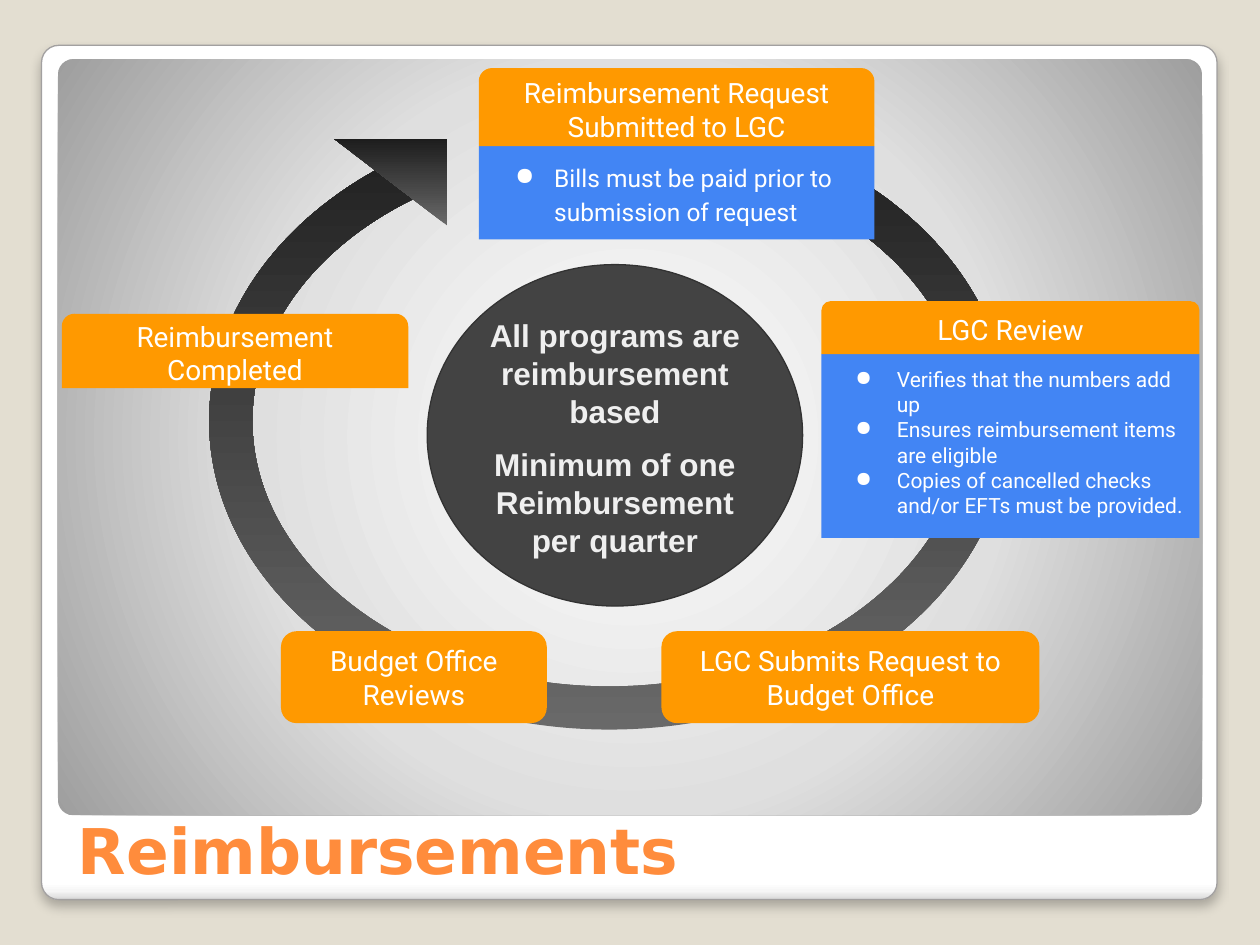
from dataclasses import dataclass

from lxml import etree
from pptx import Presentation
from pptx.dml.color import RGBColor
from pptx.enum.shapes import MSO_SHAPE
from pptx.enum.text import MSO_ANCHOR, PP_ALIGN
from pptx.oxml.ns import nsdecls, qn
from pptx.util import Inches, Pt

RECTANGLE = MSO_SHAPE.RECTANGLE
ROUNDED = MSO_SHAPE.ROUNDED_RECTANGLE
ROUND_TOP = MSO_SHAPE.ROUND_2_SAME_RECTANGLE
OVAL = MSO_SHAPE.OVAL
BLOCK_ARC = MSO_SHAPE.BLOCK_ARC
RIGHT_TRIANGLE = MSO_SHAPE.RIGHT_TRIANGLE
CENTER, LEFT = PP_ALIGN.CENTER, PP_ALIGN.LEFT
TOP, MIDDLE, BOTTOM = MSO_ANCHOR.TOP, MSO_ANCHOR.MIDDLE, MSO_ANCHOR.BOTTOM

SAND = RGBColor(0xE3, 0xDE, 0xD1)
WHITE = RGBColor(0xFF, 0xFF, 0xFF)
FRAME_LINE = RGBColor(0xA2, 0xA0, 0xA0)
CHARCOAL = RGBColor(0x43, 0x43, 0x43)
CHARCOAL_LINE = RGBColor(0x32, 0x32, 0x32)
PALE = RGBColor(0xEF, 0xEF, 0xEF)
ORANGE = RGBColor(0xFF, 0x99, 0x00)
TITLE_ORANGE = RGBColor(0xFF, 0x8C, 0x3C)
BLUE = RGBColor(0x42, 0x85, 0xF4)

COLUMNS, ROWS = 100, 75
CELL = Inches(0.1)

DOWNWARD = '<a:lin ang="5400000" scaled="0"/>'
FROM_CENTER = ('<a:path path="circle"><a:fillToRect l="50000" t="50000" '
               'r="50000" b="50000"/></a:path>')
FRAME_STOPS = [(0, "FFFFFF"), (98, "FFFFFF"), (99, "F6F6F6"), (100, "D8D8D8")]
PANEL_STOPS = [(0, "FFFFFF"), (55, "DFDFDF"), (100, "9E9E9E")]
ARROW_STOPS = [(0, "696969"), (100, "1D1D1D")]


@dataclass(frozen=True)
class Area:
    """A place on the slide, in grid columns and rows."""
    column: float
    row: float
    columns: float
    rows: float

    def box(self) -> list[int]:
        return [round(n * CELL) for n in (self.column, self.row, self.columns, self.rows)]


@dataclass(frozen=True)
class TextStyle:
    font: str
    size: float
    color: RGBColor
    bold: bool = False
    align: PP_ALIGN = CENTER
    anchor: MSO_ANCHOR = MIDDLE
    inset: float = 0.1
    gap: float = 0
    spacing: float = 1.0
    hanging: float = 0


@dataclass(frozen=True)
class Step:
    """A stage of the cycle: a heading with optional points below it."""
    heading: str
    area: Area
    outline: MSO_SHAPE = ROUNDED
    points: tuple[str, ...] = ()
    points_rows: float = 0
    points_style: TextStyle | None = None


TITLE = TextStyle("DejaVu Sans", 36, TITLE_ORANGE, True, LEFT, BOTTOM, 0.05)
CORE = TextStyle("Arial", 18, PALE, True, anchor=TOP, gap=9)
HEADING = TextStyle("Roboto", 16, WHITE)
REQUEST_POINTS = TextStyle("Roboto", 14, WHITE, align=LEFT, anchor=TOP,
                           spacing=1.15, hanging=0.31)
REVIEW_POINTS = TextStyle("Roboto", 12, WHITE, align=LEFT, anchor=TOP, hanging=0.33)

STEPS = [
    Step("Reimbursement Request Submitted to LGC", Area(38, 5.4, 31.4, 6.2), ROUND_TOP,
         ("Bills must be paid prior to submission of request",), 7.4, REQUEST_POINTS),
    Step("Reimbursement Completed", Area(4.9, 24.9, 27.5, 5.9), ROUND_TOP),
    Step("LGC Submits Request to Budget Office", Area(52.5, 50.1, 30, 7.3)),
    Step("Budget Office Reviews", Area(22.3, 50.1, 21.1, 7.3)),
    Step("LGC Review", Area(65.2, 23.9, 30, 4.2), ROUND_TOP,
         ("Verifies that the numbers add up",
          "Ensures reimbursement items are eligible",
          "Copies of cancelled checks and/or EFTs must be provided."), 14.6, REVIEW_POINTS),
]


def add_bullet(para, hanging: float) -> None:
    properties = para._p.get_or_add_pPr()
    properties.set("marL", str(Inches(0.5)))
    properties.set("indent", str(-Inches(hanging)))
    color = etree.SubElement(properties, qn("a:buClr"))
    etree.SubElement(color, qn("a:srgbClr"), val=str(WHITE))
    etree.SubElement(properties, qn("a:buChar"), char="●")


def write(box, paragraphs: tuple[str, ...], style: TextStyle) -> None:
    frame = box.text_frame
    frame.word_wrap = True
    frame.vertical_anchor = style.anchor
    frame.margin_left = frame.margin_right = Inches(0.1)
    frame.margin_top = frame.margin_bottom = Inches(style.inset)
    for index, text in enumerate(paragraphs):
        para = frame.add_paragraph() if index else frame.paragraphs[0]
        para.alignment = style.align
        para.line_spacing = style.spacing
        para.space_before = Pt(style.gap if index else 0)
        if style.hanging:
            add_bullet(para, style.hanging)
        span = para.add_run()
        span.text = text
        span.font.name = style.font
        span.font.size = Pt(style.size)
        span.font.bold = style.bold
        span.font.color.rgb = style.color


def add_text(page, area: Area, paragraphs: tuple[str, ...], style: TextStyle) -> None:
    write(page.shapes.add_textbox(*area.box()), paragraphs, style)


def add_shape(page, outline: MSO_SHAPE, area: Area, fill: RGBColor | None = None,
              line: RGBColor | None = None, adjustments: tuple[float, ...] = ()):
    shape = page.shapes.add_shape(outline, *area.box())
    shape.shadow.inherit = False
    for index, value in enumerate(adjustments):
        shape.adjustments[index] = value
    if fill is not None:
        shape.fill.solid()
        shape.fill.fore_color.rgb = fill
    if line is None:
        shape.line.fill.background()
    else:
        shape.line.color.rgb = line
        shape.line.width = Pt(0.75)
    return shape


def fill_gradient(shape, stops: list[tuple[int, str]], direction: str) -> None:
    marks = "".join(f'<a:gs pos="{share * 1000}"><a:srgbClr val="{color}"/></a:gs>'
                    for share, color in stops)
    gradient = etree.fromstring(f'<a:gradFill {nsdecls("a")} rotWithShape="1">'
                                f'<a:gsLst>{marks}</a:gsLst>{direction}</a:gradFill>')
    shape._element.spPr.find(qn("a:prstGeom")).addnext(gradient)


def add_drop_shadow(shape) -> None:
    effects = shape._element.spPr.find(qn("a:effectLst"))
    shadow = etree.SubElement(effects, qn("a:outerShdw"), blurRad=str(Pt(6)),
                              dist=str(Pt(4)), dir="5400000", rotWithShape="0")
    color = etree.SubElement(shadow, qn("a:srgbClr"), val="000000")
    etree.SubElement(color, qn("a:alpha"), val="25000")


def add_backdrop(page) -> None:
    page.background.fill.solid()
    page.background.fill.fore_color.rgb = SAND
    frame = add_shape(page, ROUNDED, Area(3.3, 3.6, 93.3, 67.8), None, FRAME_LINE, (0.02,))
    fill_gradient(frame, FRAME_STOPS, DOWNWARD)
    add_drop_shadow(frame)
    panel = add_shape(page, ROUNDED, Area(4.6, 4.7, 90.8, 60), adjustments=(0.02,))
    fill_gradient(panel, PANEL_STOPS, FROM_CENTER)


def add_cycle_arrow(page) -> None:
    ring = add_shape(page, BLOCK_ARC, Area(16.6, 8.9, 63.5, 49),
                     adjustments=(54, 30.13, 0.07))
    head = add_shape(page, RIGHT_TRIANGLE, Area(26.5, 11, 9, 6.9))
    for part in (ring, head):
        part.rotation = 180
        fill_gradient(part, ARROW_STOPS, DOWNWARD)


def add_step(page, step: Step) -> None:
    area = step.area
    if step.points:
        below = Area(area.column, area.row + area.rows, area.columns, step.points_rows)
        write(add_shape(page, RECTANGLE, below, BLUE), step.points, step.points_style)
    write(add_shape(page, step.outline, area, ORANGE, adjustments=(0.17,)),
          (step.heading,), HEADING)


def main() -> None:
    deck = Presentation()
    deck.slide_width, deck.slide_height = COLUMNS * CELL, ROWS * CELL
    page = deck.slides.add_slide(deck.slide_layouts[6])
    add_backdrop(page)
    add_shape(page, OVAL, Area(33.9, 21, 29.8, 27.1), CHARCOAL, CHARCOAL_LINE)
    add_text(page, Area(5.2, 59.4, 89.5, 11.5), ("Reimbursements",), TITLE)
    add_text(page, Area(36.4, 24.1, 24.8, 21.2),
             ("All programs are reimbursement based",
              "Minimum of one Reimbursement per quarter"), CORE)
    add_cycle_arrow(page)
    for step in STEPS:
        add_step(page, step)
    deck.save("out.pptx")


if __name__ == "__main__":
    main()
